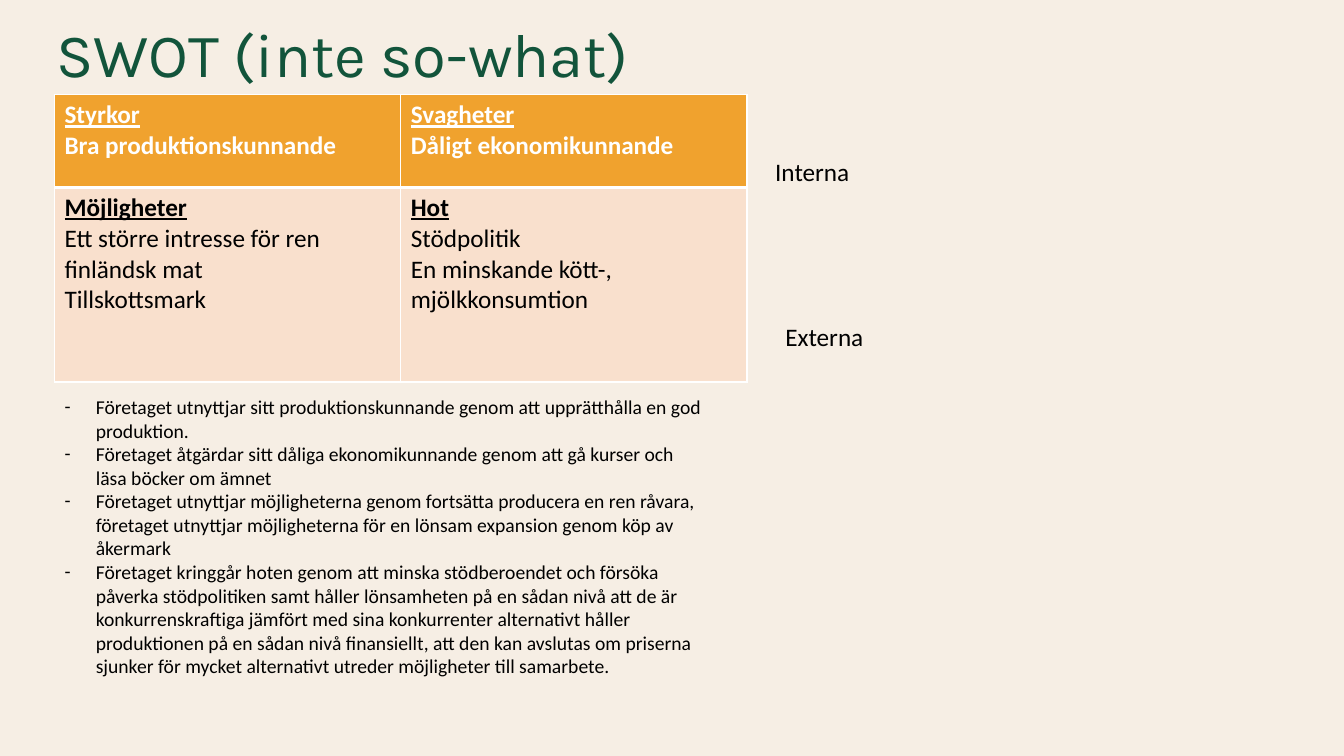
from lxml import etree
from pptx import Presentation
from pptx.dml.color import RGBColor
from pptx.enum.text import MSO_ANCHOR, MSO_AUTO_SIZE, PP_ALIGN
from pptx.oxml.ns import qn
from pptx.util import Inches, Pt

LEFT = PP_ALIGN.LEFT
TOP = MSO_ANCHOR.TOP
NO_FIT = MSO_AUTO_SIZE.NONE
COLORS = {
    "background": "F6EEE4",
    "title": "12543B",
    "internal": "F0A22E",
    "external": "F9E0CD",
    "white": "FFFFFF",
    "black": "000000",
}
SWOT = [
    [
        ["Styrkor", "Bra produktionskunnande"],
        ["Svagheter", "Dåligt ekonomikunnande"],
    ],
    [
        ["Möjligheter", "Ett större intresse för ren finländsk mat", "Tillskottsmark"],
        ["Hot", "Stödpolitik", "En minskande kött-, mjölkkonsumtion"],
    ],
]
ACTIONS = [
    "Företaget utnyttjar sitt produktionskunnande genom att upprätthålla en god produktion.",
    "Företaget åtgärdar sitt dåliga ekonomikunnande genom att gå kurser och läsa böcker om ämnet",
    "Företaget utnyttjar möjligheterna genom fortsätta producera en ren råvara, företaget "
    "utnyttjar möjligheterna för en lönsam expansion genom köp av åkermark",
    "Företaget kringgår hoten genom att minska stödberoendet och försöka påverka stödpolitiken "
    "samt håller lönsamheten på en sådan nivå att de är konkurrenskraftiga jämfört med sina "
    "konkurrenter alternativt håller produktionen på en sådan nivå finansiellt, att den kan "
    "avslutas om priserna sjunker för mycket alternativt utreder möjligheter till samarbete.",
]


def rgb(name):
    """Return the named colour."""
    return RGBColor.from_string(COLORS[name])


def format_paragraph(paragraph, size, color="black", font="Calibri", bold=False, underline=False):
    """Align a paragraph left and style its runs."""
    paragraph.alignment = LEFT
    for run in paragraph.runs:
        run.font.size = Pt(size)
        run.font.name = font
        run.font.bold = bold
        run.font.underline = underline
        run.font.color.rgb = rgb(color)


def place(shape, left, top, width, height):
    """Move a shape and let its text start at the top and wrap."""
    shape.left, shape.top = Inches(left), Inches(top)
    shape.width, shape.height = Inches(width), Inches(height)
    frame = shape.text_frame
    frame.auto_size = NO_FIT
    frame.vertical_anchor = TOP
    frame.word_wrap = True
    return frame


def add_title(slide, text):
    """Fill the title placeholder."""
    frame = place(slide.shapes.title, 0.46, 0.19, 10.22, 0.75)
    frame.text = text
    heading = frame.paragraphs[0]
    heading.line_spacing = 0.9
    format_paragraph(heading, 44, "title", "Karla")


def set_border(cell, side, width):
    """Draw one white cell edge."""
    line = etree.SubElement(cell._tc.get_or_add_tcPr(), qn(f"a:ln{side}"), w=str(Pt(width)))
    fill = etree.SubElement(line, qn("a:solidFill"))
    etree.SubElement(fill, qn("a:srgbClr"), val=COLORS["white"])


def fill_quadrant(cell, lines, internal):
    """Write one quadrant with an underlined heading."""
    middle_edge = "B" if internal else "T"
    for side in "LRTB":
        set_border(cell, side, 3 if side == middle_edge else 1)
    cell.fill.solid()
    cell.fill.fore_color.rgb = rgb("internal" if internal else "external")
    cell.text_frame.text = "\n".join(lines)
    for index, paragraph in enumerate(cell.text_frame.paragraphs):
        is_heading = index == 0
        format_paragraph(paragraph, 18, "white" if internal else "black",
                         bold=internal or is_heading, underline=is_heading)


def add_swot(slide):
    """Add the two by two SWOT table."""
    table = slide.shapes.add_table(
        2, 2, Inches(0.54), Inches(0.94), Inches(6.87), Inches(2.85)).table
    for row, height in zip(table.rows, (0.92, 1.93)):
        row.height = Inches(height)
    for row_index, quadrants in enumerate(SWOT):
        for column_index, lines in enumerate(quadrants):
            fill_quadrant(table.cell(row_index, column_index), lines, row_index == 0)


def add_label(slide, text, left, top, width, height):
    """Add a label beside a table row."""
    label = slide.shapes.add_textbox(0, 0, 0, 0)
    frame = place(label, left, top, width, height)
    frame.text = text
    format_paragraph(frame.paragraphs[0], 18)


def add_actions(slide):
    """Fill the body placeholder with the dashed list of actions."""
    frame = place(slide.placeholders[1], 0.54, 3.87, 6.55, 2.93)
    frame.text = "\n".join(ACTIONS)
    for action in frame.paragraphs:
        properties = action._p.get_or_add_pPr()
        properties.set("marL", str(Inches(0.31)))
        properties.set("indent", str(Inches(-0.31)))
        etree.SubElement(properties, qn("a:buFont"), typeface="Calibri")
        etree.SubElement(properties, qn("a:buChar"), char="-")
        action.space_before = Pt(0)
        format_paragraph(action, 14)


def main():
    """Build and save the SWOT slide."""
    presentation = Presentation()
    presentation.slide_width = Inches(13.33)
    presentation.slide_height = Inches(7.5)
    slide = presentation.slides.add_slide(presentation.slide_layouts[1])
    slide.background.fill.solid()
    slide.background.fill.fore_color.rgb = rgb("background")
    add_title(slide, "SWOT (inte so-what)")
    add_swot(slide)
    add_label(slide, "Externa", 7.69, 3.14, 2.18, 0.4)
    add_label(slide, "Interna", 7.59, 1.5, 1.54, 0.71)
    add_actions(slide)
    presentation.save("out.pptx")


if __name__ == "__main__":
    main()
